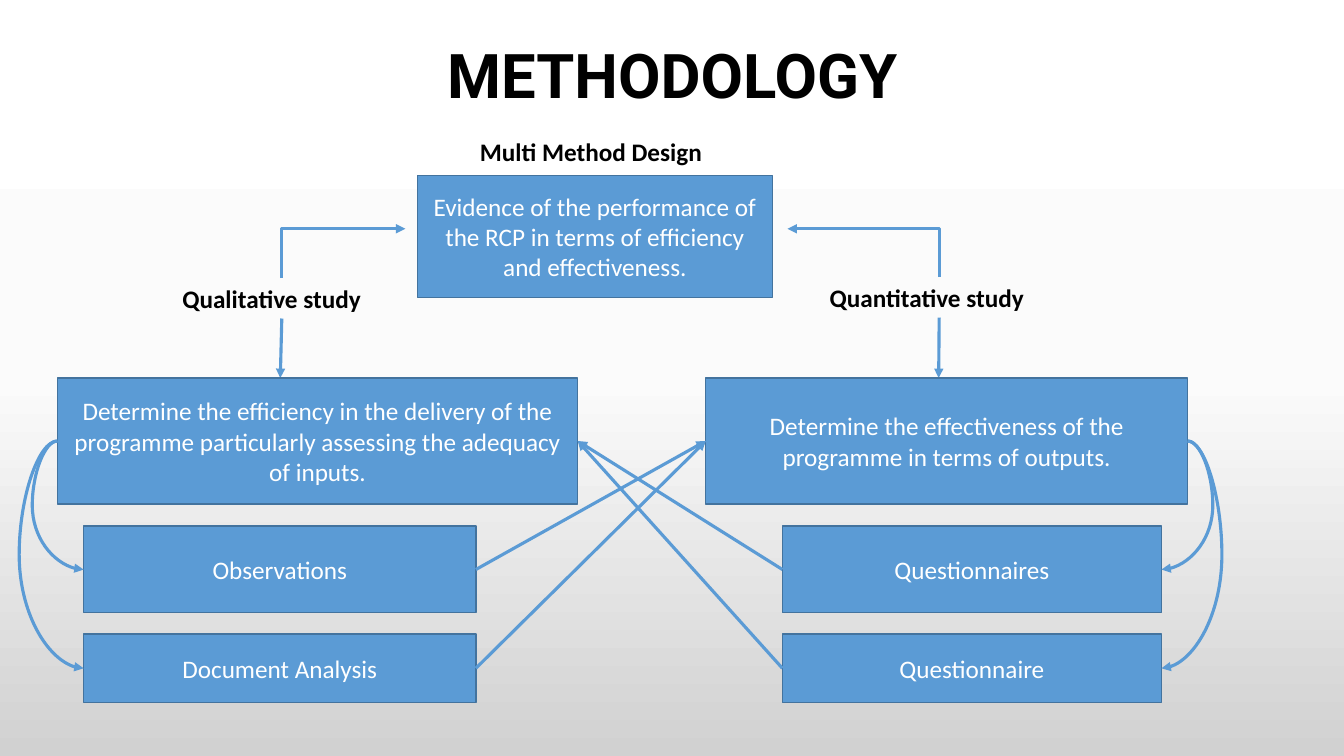
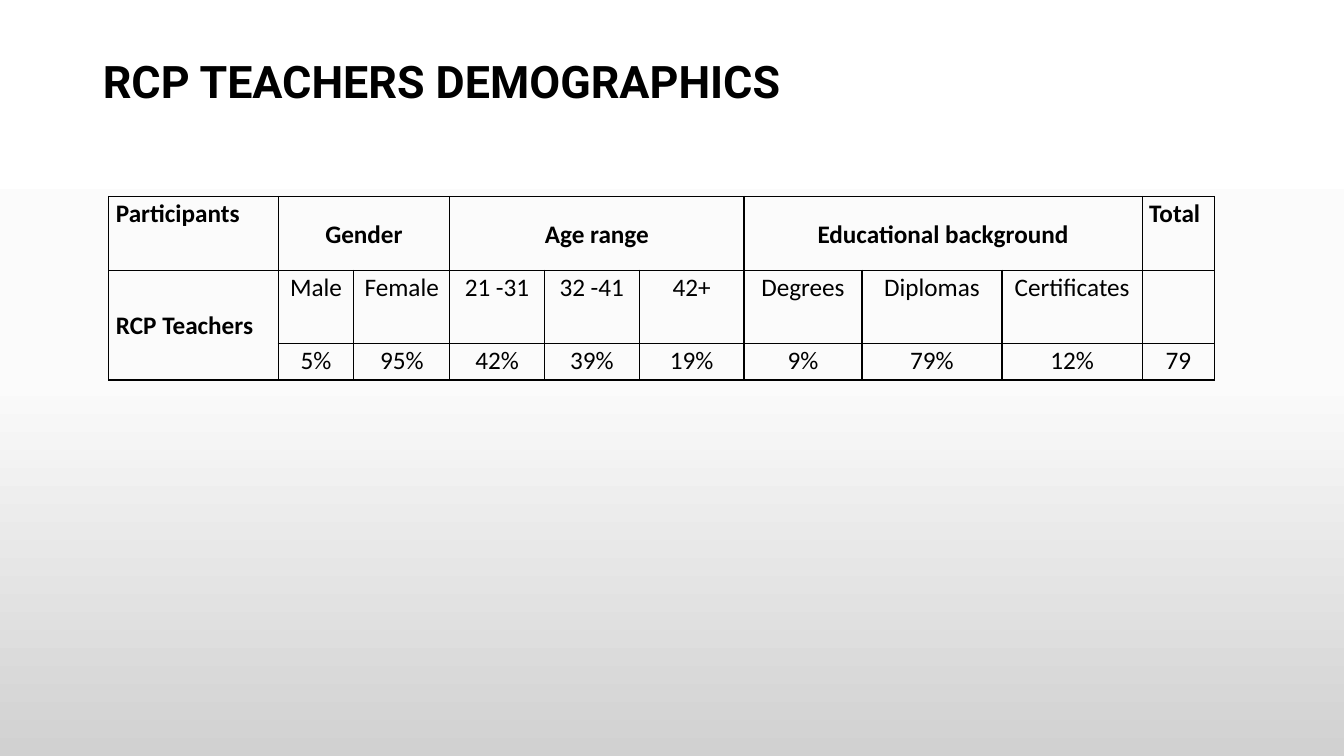
from copy import deepcopy
from lxml.etree import SubElement
from pptx import Presentation
from pptx.dml.color import RGBColor
from pptx.enum.shapes import MSO_CONNECTOR, MSO_SHAPE
from pptx.enum.text import MSO_ANCHOR, MSO_AUTO_SIZE, PP_ALIGN
from pptx.oxml.ns import qn
from pptx.util import Inches, Pt

BLUE = RGBColor(0x5B, 0x9B, 0xD5)
EDGE = RGBColor(0x43, 0x73, 0x9E)
BLACK = RGBColor(0, 0, 0)
WHITE = RGBColor(0xFF, 0xFF, 0xFF)
PALE = RGBColor(0xFB, 0xFB, 0xFB)
GREY = RGBColor(0xD1, 0xD1, 0xD1)
TOP, LEFT, BOTTOM, RIGHT = range(4)

COLS = [1.68, 0.75, 0.95, 0.94, 0.94, 1.04, 1.17, 1.39, 1.39, 0.72]
ROWS = [0.73, 0.73, 0.36]
CELLS = [
    ["Participants", "Gender", "", "Age range", "", "",
     "Educational background", "", "", "Total"],
    ["RCP Teachers", "Male", "Female", "21 -31", "32 -41", "42+",
     "Degrees", "Diplomas", "Certificates", ""],
    ["", "5%", "95%", "42%", "39%", "19%", "9%", "79%", "12%", "79"],
]
MERGES = [(0, 1, 0, 2), (0, 3, 0, 5), (0, 6, 0, 8), (1, 0, 2, 0)]


def set_back(master):
    """Give all slides a three-stop gradient from top to bottom."""
    fill = master.background.fill
    fill.gradient()
    fill.gradient_angle = 270
    stops = master.element.find(".//" + qn("a:gsLst"))
    stops.append(deepcopy(stops[-1]))
    tones = [(0, WHITE), (0.5, PALE), (1, GREY)]
    for stop, (place, tone) in zip(fill.gradient_stops, tones):
        stop.position = place
        stop.color.rgb = tone


def style(frame, color, bold=False, align=None, size=18, face="Calibri"):
    for para in frame.paragraphs:
        para.alignment = align
        for run in para.runs:
            font = run.font
            font.name, font.size, font.bold = face, Pt(size), bold
            font.color.rgb = color


def add_page(deck, text, top, size, align):
    """Add a title-only slide with its title formatted."""
    slide = deck.slides.add_slide(deck.slide_layouts[5])
    title = slide.shapes.title
    title.left, title.top = Inches(0.92), Inches(top)
    title.width, title.height = Inches(11.5), Inches(1.45)
    frame = title.text_frame
    frame.text = text
    frame.auto_size = MSO_AUTO_SIZE.NONE
    frame.vertical_anchor = MSO_ANCHOR.MIDDLE
    frame.paragraphs[0].line_spacing = 0.9
    style(frame, BLACK, True, align, size, "Roboto")
    return slide


def add_box(slide, text, *area):
    box = slide.shapes.add_shape(MSO_SHAPE.RECTANGLE, *map(Inches, area))
    box.shadow.inherit = False
    box.fill.solid()
    box.fill.fore_color.rgb = BLUE
    box.line.color.rgb = EDGE
    box.line.width = Pt(1)
    frame = box.text_frame
    frame.text = text
    frame.vertical_anchor = MSO_ANCHOR.MIDDLE
    style(frame, WHITE, align=PP_ALIGN.CENTER)
    return box


def add_label(slide, text, *area, align=PP_ALIGN.LEFT):
    label = slide.shapes.add_textbox(*map(Inches, area))
    frame = label.text_frame
    frame.text = text
    frame.word_wrap = True
    frame.auto_size = MSO_AUTO_SIZE.SHAPE_TO_FIT_TEXT
    style(frame, BLACK, True, align)
    return label


def add_arrow(slide, start, side, end, kind=MSO_CONNECTOR.STRAIGHT):
    """Draw from a shape's side to a point or to a (shape, side) pair."""
    joined = not isinstance(end[0], (int, float))
    spot = (0, 0) if joined else map(Inches, end)
    arrow = slide.shapes.add_connector(kind, 0, 0, *spot)
    arrow.begin_connect(start, side)
    if joined:
        arrow.end_connect(*end)
    arrow.line.color.rgb = BLUE
    arrow.line.width = Pt(2.25)
    SubElement(arrow.line._get_or_add_ln(), qn("a:tailEnd"), type="triangle")
    SubElement(arrow.element.spPr, qn("a:effectLst"))
    return arrow


def add_bend(slide, label, end):
    """Draw up from a label's top, then sideways to the end point."""
    arrow = add_arrow(slide, label, TOP, end, MSO_CONNECTOR.ELBOW)
    wide, high = arrow.width, arrow.height
    right = arrow.end_x > arrow.begin_x
    arrow.left += (wide - high) // 2
    arrow.top += (high - wide) // 2
    arrow.width, arrow.height = high, wide
    props = arrow.element.spPr
    props.find(qn("a:prstGeom")).set("prst", "bentConnector2")
    frame = props.find(qn("a:xfrm"))
    frame.set("rot", str((90 if right else 270) * 60000))
    frame.set("flipH", "1" if right else "0")
    frame.set("flipV", "1")


def add_curve(slide, start, end, side, bulge):
    """Loop between like sides; bulge is the reach past the start."""
    arrow = add_arrow(slide, start, side, (end, side), MSO_CONNECTOR.CURVE)
    ratio = -Inches(bulge) / arrow.width
    guides = arrow.element.spPr.find(qn("a:prstGeom")).find(qn("a:avLst"))
    SubElement(guides, qn("a:gd"), name="adj1",
               fmla=f"val {round(ratio * 100000)}")


def set_edges(cell):
    props = cell._tc.get_or_add_tcPr()
    for place, tag in enumerate(("a:lnL", "a:lnR", "a:lnT", "a:lnB")):
        line = props.makeelement(qn(tag), {"w": str(Pt(1))})
        fill = SubElement(line, qn("a:solidFill"))
        SubElement(fill, qn("a:srgbClr"), val=str(BLACK))
        props.insert(place, line)


def fill_cell(cell, text, row, col):
    cell.fill.background()
    set_edges(cell)
    cell.margin_left = cell.margin_right = Inches(0.07)
    cell.margin_top = cell.margin_bottom = 0
    if cell.is_merge_origin:
        cell.vertical_anchor = MSO_ANCHOR.MIDDLE
    frame = cell.text_frame
    frame.text = text
    para = frame.paragraphs[0]
    para.line_spacing = 1.07
    para.font.size = Pt(18)
    plain = col == 0 or text == "Total"
    align = PP_ALIGN.LEFT if plain else PP_ALIGN.CENTER
    style(frame, BLACK, row == 0 or col == 0, align)


def add_grid(slide):
    area = map(Inches, (1.08, 1.95, sum(COLS), sum(ROWS)))
    table = slide.shapes.add_table(len(ROWS), len(COLS), *area).table
    table.first_row = table.horz_banding = False
    for col, width in zip(table.columns, COLS):
        col.width = Inches(width)
    for row, height in zip(table.rows, ROWS):
        row.height = Inches(height)
    for top, left, low, right in MERGES:
        table.cell(top, left).merge(table.cell(low, right))
    for row, texts in enumerate(CELLS):
        for col, text in enumerate(texts):
            fill_cell(table.cell(row, col), text, row, col)


def draw_method(deck):
    slide = add_page(deck, "METHODOLOGY", 0.05, 44, PP_ALIGN.CENTER)
    add_label(slide, "Multi Method Design ", 4.65, 1.3, 2.48, 0.4,
              align=PP_ALIGN.CENTER)
    add_box(slide, "Evidence of the performance of the RCP in terms of "
            "efficiency and effectiveness.", 4.14, 1.74, 3.52, 1.21)
    qual = add_label(slide, "Qualitative study", 1.71, 2.76, 2.17, 0.4)
    quant = add_label(slide, "Quantitative study", 8.13, 2.75, 2.37, 0.4)
    add_bend(slide, qual, (4.02, 2.27))
    add_bend(slide, quant, (7.81, 2.27))
    add_arrow(slide, qual, BOTTOM, (2.78, 3.75))
    add_arrow(slide, quant, BOTTOM, (9.31, 3.75))

    inputs = add_box(slide, "Determine the efficiency in the delivery of the "
                     "programme particularly assessing the adequacy of "
                     "inputs.", 0.57, 3.75, 5.16, 1.25)
    outputs = add_box(slide, "Determine the effectiveness of the programme "
                      "in terms of outputs.", 7, 3.75, 4.78, 1.25)
    sides = [
        (0.83, 3.89, ("Observations", "Document Analysis"),
         inputs, outputs, LEFT, RIGHT, (0.25, 0.38)),
        (7.76, 3.76, ("Questionnaires", "Questionnaire"),
         outputs, inputs, RIGHT, LEFT, (0.25, 0.34)),
    ]
    levels = [(5.22, 0.86), (6.29, 0.68)]
    for left, width, names, own, other, outer, inner, reach in sides:
        for name, (top, height), bulge in zip(names, levels, reach):
            tool = add_box(slide, name, left, top, width, height)
            add_arrow(slide, tool, inner, (other, outer))
            add_curve(slide, own, tool, outer, bulge)


def draw_people(deck):
    slide = add_page(deck, "RCP TEACHERS DEMOGRAPHICS", 0.11, 32,
                     PP_ALIGN.LEFT)
    add_grid(slide)


def main():
    deck = Presentation()
    deck.slide_width, deck.slide_height = Inches(13.33), Inches(7.5)
    set_back(deck.slide_master)
    draw_method(deck)
    draw_people(deck)
    deck.save("out.pptx")


if __name__ == "__main__":
    main()
